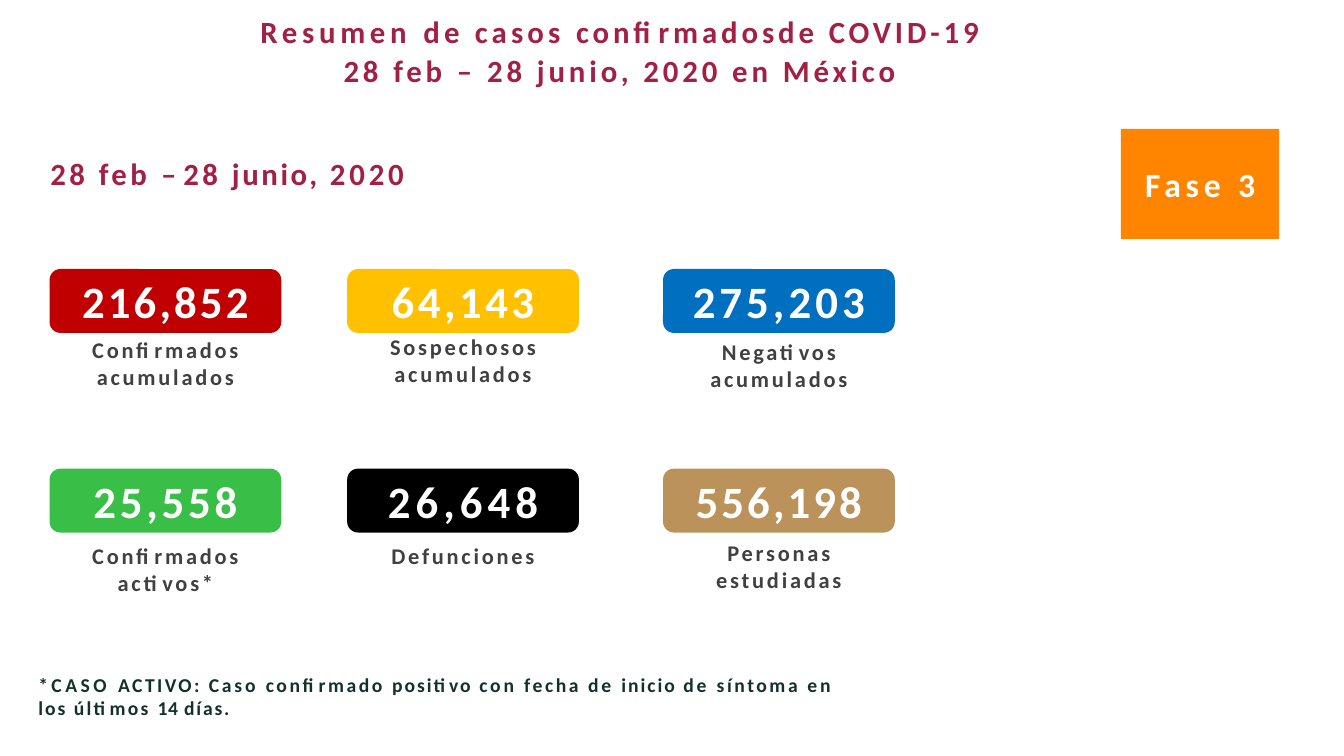
from itertools import product

from pptx import Presentation
from pptx.dml.color import RGBColor
from pptx.enum.shapes import MSO_SHAPE
from pptx.enum.text import MSO_ANCHOR, MSO_AUTO_SIZE, PP_ALIGN
from pptx.util import Cm, Pt

INK = {
    "wine": "A32045", "pine": "12312B", "gray": "404040", "white": "FFFFFF",
    "orange": "FF8500", "red": "C00000", "gold": "FFC000", "blue": "006FC0",
    "green": "39BE48", "black": "000000", "tan": "BB935A",
}
COLS = (1.25, 8.75, 16.71)
ROWS = (6.78, 11.81)
CARD = (5.84, 1.61)
CASES = [
    ("216,852", 2.2, "Confirmados acumulados", 6.1, "red"),
    ("64,143", 2.5, "Sospechosos acumulados", 3.8, "gold"),
    ("275,203", 2.9, "Negativos acumulados", 7.4, "blue"),
    ("25,558", 2.7, "Confirmados activos*", 10.6, "green"),
    ("26,648", 3.6, "Defunciones", 10.3, "black"),
    ("556,198", 2.2, "Personas estudiadas", 8.1, "tan"),
]
NOTE = [
    ("* ", -0.9), ("CASO ", 2.5), ("ACTIVO: ", 1.7), ("Caso ", 2),
    ("confirmado ", 1.8), ("positivo ", 1.4), ("con ", 2), ("fecha ", 1.8),
    ("de ", 2), ("inicio ", 1.4), ("de ", 2), ("síntoma ", 1.8), ("en ", 2),
    ("los ", 1.4), ("últimos ", 1.6), ("14 ", 0.5), ("días.", 1.3),
]


def setup(shape, top=0.0, anchor=MSO_ANCHOR.TOP):
    """Clear the margins of a shape's text and return its frame."""
    frame = shape.text_frame
    frame.word_wrap = True
    frame.auto_size = MSO_AUTO_SIZE.NONE
    frame.vertical_anchor = anchor
    frame.margin_left = frame.margin_right = frame.margin_bottom = 0
    frame.margin_top = Cm(top)
    return frame


def write(frame, parts, size, ink, align=PP_ALIGN.CENTER, before=0.0):
    """Add one bold paragraph made of (text, letter spacing) parts."""
    para = frame.paragraphs[-1]
    if para.runs:
        para = frame.add_paragraph()
    para.alignment = align
    para.space_before = Pt(before)
    for text, gap in parts:
        run = para.add_run()
        run.text = text
        font = run.font
        font.name, font.size, font.bold = "Calibri", Pt(size), True
        font.color.rgb = RGBColor.from_string(INK[ink])
        run._r.get_or_add_rPr().set("spc", str(round(gap * 100)))


def block(slide, kind, box, ink):
    """Draw a flat filled shape without outline."""
    shape = slide.shapes.add_shape(kind, *map(Cm, box))
    shape.shadow.inherit = False
    shape.fill.solid()
    shape.fill.fore_color.rgb = RGBColor.from_string(INK[ink])
    shape.line.fill.background()
    return shape


def head(slide, box):
    """Fill the title placeholder with its two lines."""
    title = slide.shapes.title
    title.left, title.top, title.width, title.height = map(Cm, box)
    frame = setup(title, 0.03)
    write(frame, [("Resumen ", 3.4), ("de casos ", 3),
                  ("confirmadosde COVID-19", 2.8)], 22, "wine", before=0.9)
    write(frame, [("28 feb – 28 junio, 2020 en México", 2.8)],
          22, "wine", before=0.9)


def line(slide, box, parts, size, ink):
    """Place a left-aligned text box."""
    frame = setup(slide.shapes.add_textbox(*map(Cm, box)), 0.03)
    write(frame, parts, size, ink, PP_ALIGN.LEFT, 0.9)


def badge(slide, box):
    """Draw the phase badge."""
    shape = block(slide, MSO_SHAPE.RECTANGLE, box, "orange")
    frame = setup(shape, anchor=MSO_ANCHOR.MIDDLE)
    write(frame, [("Fase ", 3.4), ("3", 2)], 24, "white")


def card(slide, box, value, gap, label, before, ink):
    """Draw a coloured card with its figure and the label below."""
    left, top, width, height = box
    shape = block(slide, MSO_SHAPE.ROUNDED_RECTANGLE, box, ink)
    shape.adjustments[0] = 0.17
    inner = (left + 0.5, top, width - 1, height + 1.7)
    frame = setup(slide.shapes.add_textbox(*map(Cm, inner)), 0.13)
    write(frame, [(value, gap)], 32, "white")
    for word in label.split():
        write(frame, [(word, 2)], 16, "gray", before=before)
        before = 0.1


def main():
    """Build the slide and save it."""
    deck = Presentation()
    deck.slide_width, deck.slide_height = Cm(33.87), Cm(19.05)
    slide = deck.slides.add_slide(deck.slide_layouts[5])
    head(slide, (6.3, 0.3, 18.64, 2.92))
    line(slide, (1.27, 3.86, 9.3, 1), [
        ("28 feb ", 2.5), ("– ", 0), ("28 ", 2.5), ("junio, ", 1.9),
        ("2020", 2.8)], 22, "wine")
    badge(slide, (28.25, 3.25, 3.99, 2.77))
    for (top, left), case in zip(product(ROWS, COLS), CASES):
        card(slide, (left, top, *CARD), *case)
    line(slide, (0.97, 16.92, 20.7, 1.27), NOTE, 14, "pine")
    deck.save("out.pptx")


if __name__ == "__main__":
    main()
